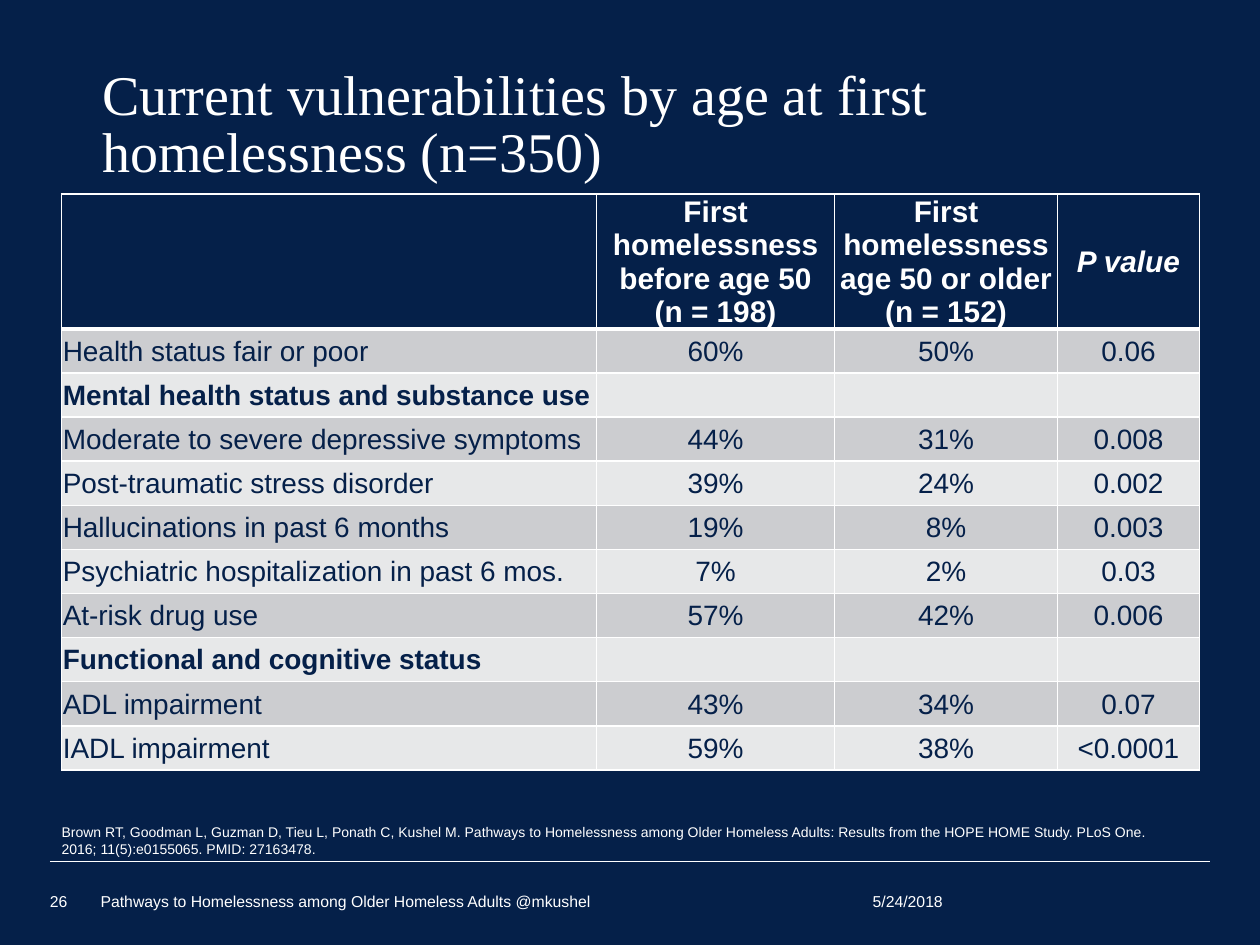
import pptx
import pptx.util
import pptx.dml.color
import pptx.enum.shapes
import pptx.enum.text
import pptx.oxml
import pptx.oxml.ns
from lxml import etree

Pt = pptx.util.Pt
RGBColor = pptx.dml.color.RGBColor
ANCHOR = pptx.enum.text.MSO_ANCHOR
ALIGN = pptx.enum.text.PP_ALIGN

NAVY = RGBColor(0x05, 0x20, 0x49)
WHITE = RGBColor(0xFF, 0xFF, 0xFF)
DARK_BAND = RGBColor(0xCC, 0xCD, 0xD0)
LIGHT_BAND = RGBColor(0xE7, 0xE8, 0xE9)

COLUMN_WIDTHS = [305.8, 135.9, 127.5, 81]
HEADER_HEIGHT = 71.3
ROW_HEIGHT = 25.2
HEADINGS = [
    [],
    ["First homelessness before age 50", "(n = 198)"],
    ["First homelessness age 50 or older", "(n = 152)"],
    ["P value"],
]
# A row with a label only is a section heading
ROWS = [
    ["Health status fair or poor", "60%", "50%", "0.06"],
    ["Mental health status and substance use"],
    ["Moderate to severe depressive symptoms", "44%", "31%", "0.008"],
    ["Post-traumatic stress disorder", "39%", "24%", "0.002"],
    ["Hallucinations in past 6 months", "19%", "8%", "0.003"],
    ["Psychiatric hospitalization in past 6 mos.", "7%", "2%", "0.03"],
    ["At-risk drug use", "57%", "42%", "0.006"],
    ["Functional and cognitive status"],
    ["ADL impairment", "43%", "34%", "0.07"],
    ["IADL impairment", "59%", "38%", "<0.0001"],
]
CITATION = (
    "Brown RT, Goodman L, Guzman D, Tieu L, Ponath C,\u00a0Kushel M. "
    "Pathways to Homelessness among Older Homeless Adults: Results from the "
    "HOPE HOME Study. PLoS\u00a0One. 2016; 11(5):e0155065. PMID: 27163478."
)


def add_span(para, text, size, color=WHITE, font="Arial", bold=False, italic=False):
    span = para.add_run()
    span.text = text
    span.font.name = font
    span.font.size = Pt(size)
    span.font.color.rgb = color
    span.font.bold = bold
    span.font.italic = italic


def place(shape, box):
    shape.left, shape.top, shape.width, shape.height = map(Pt, box)


def add_title(page, box):
    title = page.shapes.title
    place(title, box)
    frame = title.text_frame
    frame.word_wrap = True
    frame.vertical_anchor = ANCHOR.BOTTOM
    para = frame.paragraphs[0]
    para.alignment = ALIGN.LEFT
    para.line_spacing = 0.85
    add_span(para, "Current vulnerabilities by age at first homelessness (n=350)",
             32, font="Times New Roman")


def add_text(page, box, text, size, inset=True):
    frame = page.shapes.add_textbox(*map(Pt, box)).text_frame
    frame.word_wrap = True
    if not inset:
        frame.margin_left = frame.margin_right = 0
        frame.margin_top = frame.margin_bottom = 0
        frame.vertical_anchor = ANCHOR.BOTTOM
    add_span(frame.paragraphs[0], text, size)


def add_borders(cell, top, bottom):
    properties = cell._tc.get_or_add_tcPr()
    for side, width in (("L", 1), ("R", 1), ("T", top), ("B", bottom)):
        line = etree.SubElement(properties, pptx.oxml.ns.qn("a:ln" + side),
                                w=str(Pt(width)))
        fill = etree.SubElement(line, pptx.oxml.ns.qn("a:solidFill"))
        etree.SubElement(fill, pptx.oxml.ns.qn("a:srgbClr"), val=str(WHITE))


def fill_cell(cell, lines, fill, align, size, color, bold=False, italic=False):
    cell.fill.solid()
    cell.fill.fore_color.rgb = fill
    cell.vertical_anchor = ANCHOR.MIDDLE
    cell.margin_left = cell.margin_right = cell.margin_top = Pt(0.72)
    cell.margin_bottom = 0
    frame = cell.text_frame
    for index, text in enumerate(lines):
        para = frame.add_paragraph() if index else frame.paragraphs[0]
        para.alignment = align
        add_span(para, text, size, color, bold=bold, italic=italic)


def add_results_table(page, box):
    table = page.shapes.add_table(len(ROWS) + 1, len(COLUMN_WIDTHS),
                                  *map(Pt, box)).table
    for column, width in zip(table.columns, COLUMN_WIDTHS):
        column.width = Pt(width)
    for index, row in enumerate(table.rows):
        row.height = Pt(ROW_HEIGHT if index else HEADER_HEIGHT)

    # Heading row
    for column, lines in enumerate(HEADINGS):
        cell = table.cell(0, column)
        add_borders(cell, 1, 3)
        fill_cell(cell, lines, NAVY, ALIGN.CENTER, 17, WHITE, bold=True,
                  italic=lines == ["P value"])

    # Banded rows
    for row, values in enumerate(ROWS, start=1):
        band = DARK_BAND if row % 2 else LIGHT_BAND
        for column in range(len(COLUMN_WIDTHS)):
            cell = table.cell(row, column)
            add_borders(cell, 3 if row == 1 else 1, 1)
            fill_cell(cell, values[column:column + 1], band,
                      ALIGN.CENTER if column else ALIGN.LEFT, 16, NAVY,
                      bold=len(values) == 1)


def add_footer(page, box):
    left, top, width, height = box
    # Rule above the footer
    rule = page.shapes.add_connector(
        pptx.enum.shapes.MSO_CONNECTOR.STRAIGHT,
        Pt(left), Pt(top), Pt(left + width), Pt(top))
    rule.line.color.rgb = WHITE
    rule.line.width = Pt(0.25)
    etree.SubElement(rule._element.spPr, pptx.oxml.ns.qn("a:effectLst"))
    # Page number, talk and date share one baseline
    for offset, part_width, text in (
        (0, 19.4, "26"),
        (29, 339, "Pathways to Homelessness among Older Homeless Adults @mkushel"),
        (470.2, 72.7, "5/24/2018"),
    ):
        add_text(page, (left + offset, top + height - 12.2, part_width, 12.2),
                 text, 9, inset=False)


def main():
    deck = pptx.Presentation()
    deck.slide_width, deck.slide_height = Pt(720), Pt(540)
    page = deck.slides.add_slide(deck.slide_layouts[5])
    page.background.fill.solid()
    page.background.fill.fore_color.rgb = NAVY

    add_title(page, (51.1, 34.6, 637.2, 74.2))
    add_results_table(page, (35.2, 110.9, sum(COLUMN_WIDTHS),
                             HEADER_HEIGHT + ROW_HEIGHT * len(ROWS)))
    add_text(page, (28.1, 467.3, 650.2, 26.6), CITATION, 8)
    add_footer(page, (28.5, 492.3, 663, 28.2))
    deck.save("out.pptx")


if __name__ == "__main__":
    main()
